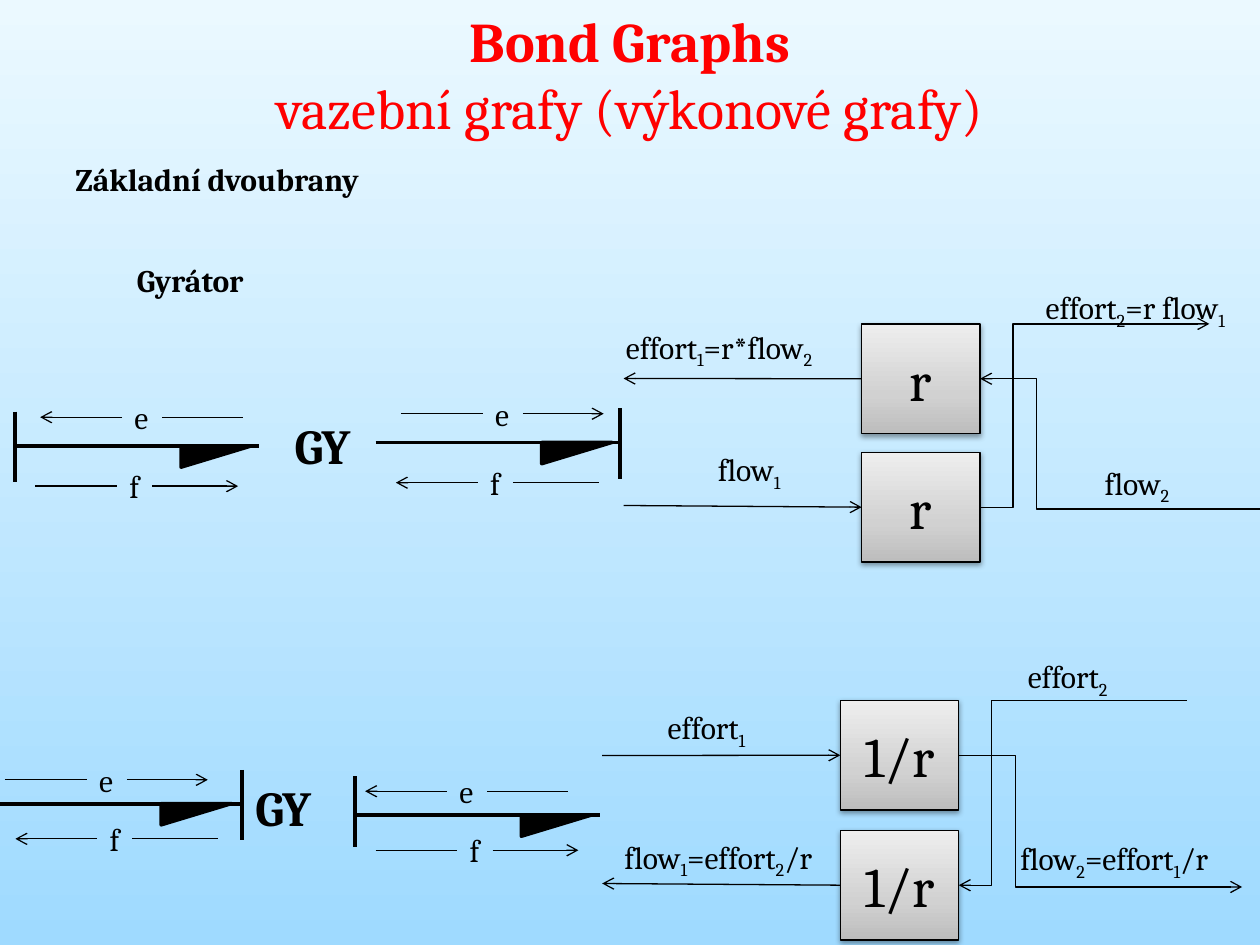
import copy
import itertools

import pptx
import pptx.dml.color
import pptx.enum.shapes
import pptx.enum.text
import pptx.oxml
import pptx.oxml.ns
import pptx.util

Cm, Pt = pptx.util.Cm, pptx.util.Pt
RGBColor = pptx.dml.color.RGBColor
SHAPES = pptx.enum.shapes.MSO_SHAPE
CONNECTORS = pptx.enum.shapes.MSO_CONNECTOR
CENTER = pptx.enum.text.PP_ALIGN.CENTER
qn = pptx.oxml.ns.qn

FONT = "Cambria"
BLACK = RGBColor(0x00, 0x00, 0x00)
RED = RGBColor(0xFF, 0x00, 0x00)
SKY_TOP = RGBColor(0xEB, 0xF9, 0xFF)
SKY_BOTTOM = RGBColor(0x9F, 0xDA, 0xFF)
BOX_DARK = RGBColor(0xBD, 0xBD, 0xBD)
BOX_MIDDLE = RGBColor(0xD1, 0xD1, 0xD1)
BOX_LIGHT = RGBColor(0xEE, 0xEE, 0xEE)

# Content; all lengths in centimetres
TITLE = [("Bond Graphs", True), ("vazební grafy (výkonové grafy)", False)]
HEADINGS = [  # text, left, top, width, height, size
    ("Základní dvoubrany", 1.27, 3.1, 7.16, 1.02, 18),
    ("Gyrátor", 2.51, 5.13, 3.1, 1.02, 18),
    ("GY", 5.69, 8.26, 2.06, 1.45, 28),
    ("GY", 4.9, 15.54, 2.06, 1.45, 28),
]
BONDS = [  # left, y, causal bar x and top, e offset x and y, f offset y, e points right
    (0.3, 8.99, 0.3, 8.3, 2.16, -1.09, 0.3, False),
    (7.57, 8.92, 12.5, 8.23, 2.16, -1.09, 0.3, True),
    (-0.1, 16.2, 4.88, 15.52, 1.85, -0.99, 0.2, True),
    (7.16, 16.43, 7.16, 15.65, 1.85, -0.99, 0.2, False),
]
DIAGRAMS = [
    {
        "gain": "r", "left": 17.37, "tops": (6.53, 9.12),
        "labels": [  # text, left, top, width
            ("effort1=r*flow2", 12.37, 6.48, 4.7),
            ("flow1", 14.22, 8.94, 1.91),
            ("effort2=r flow1", 20.83, 5.69, 4.65),
            ("flow2", 22.02, 9.22, 1.96),
        ],
        # per box: far x, far y, signal enters the box
        "left_signals": [(12.57, 7.63, False), (12.57, 10.19, True)],
        # per box: bend x, far x, far y, signal enters the box
        "right_signals": [(20.9, 25.5, 10.26, True), (20.42, 24.38, 6.53, False)],
    },
    {
        "gain": "1/r", "left": 16.94, "tops": (14.12, 16.74),
        "labels": [
            ("effort1", 13.21, 14.15, 2.26),
            ("flow1=effort2/r", 12.34, 16.76, 4.8),
            ("effort2", 20.47, 13.13, 2.31),
            ("flow2=effort1/r", 20.32, 16.79, 4.78),
        ],
        "left_signals": [(12.14, 15.23, True), (12.14, 17.81, False)],
        "right_signals": [(20.47, 25.04, 17.88, False), (19.99, 23.93, 14.12, True)],
    },
]

BOX_W, BOX_H = 2.39, 2.21
TEXT_H = 1.02
BOND_LENGTH = 4.93
BAR_H = 1.42

prs = pptx.Presentation()
prs.slide_width, prs.slide_height = Cm(25.4), Cm(19.05)
slide = prs.slides.add_slide(prs.slide_layouts[6])


def shade(fill, first, last, angle):
    fill.gradient()
    fill.gradient_angle = angle
    for stop, position, color in zip(fill.gradient_stops, (0, 1), (first, last)):
        stop.position = position
        stop.color.rgb = color


def style(paragraph, size, color=BLACK, bold=False):
    font = paragraph.font
    font.name, font.size, font.bold = FONT, Pt(size), bold
    font.color.rgb = color


def add_label(text, left, top, width, height=TEXT_H, size=18, bold=False):
    """One-line text whose digits are set as subscripts."""
    frame = slide.shapes.add_textbox(Cm(left), Cm(top), Cm(width), Cm(height)).text_frame
    frame.word_wrap = False
    frame.auto_size = pptx.enum.text.MSO_AUTO_SIZE.SHAPE_TO_FIT_TEXT
    paragraph = frame.paragraphs[0]
    style(paragraph, size, bold=bold)
    for is_digit, letters in itertools.groupby(text, str.isdigit):
        run = paragraph.add_run()
        run.text = "".join(letters)
        if is_digit:
            run.font._element.set("baseline", "-25000")


def add_line(start, end, width=0.75, arrow=False, bend=None):
    """Line between two points; bend is the x of an elbow's middle leg."""
    kind = CONNECTORS.STRAIGHT if bend is None else CONNECTORS.ELBOW
    line = slide.shapes.add_connector(kind, *(Cm(v) for v in (*start, *end)))
    line.line.color.rgb = BLACK
    line.line.width = Pt(width)
    properties = line._element.spPr
    if arrow:
        tail = pptx.oxml.parse_xml(f'<a:tailEnd {pptx.oxml.ns.nsdecls("a")} type="arrow"/>')
        line.line._get_or_add_ln().append(tail)
    if bend is not None:
        share = round((bend - start[0]) / (end[0] - start[0]) * 100000)
        guides = properties.find(qn("a:prstGeom")).get_or_add_avLst()
        guide = guides.makeelement(qn("a:gd"), {"name": "adj1", "fmla": f"val {share}"})
        guides.append(guide)
    properties.append(properties.makeelement(qn("a:effectLst"), {}))
    return line


def add_gain_box(text, left, top):
    box = slide.shapes.add_shape(SHAPES.RECTANGLE, Cm(left), Cm(top), Cm(BOX_W), Cm(BOX_H))
    shade(box.fill, BOX_DARK, BOX_LIGHT, 90)
    stops = box._element.spPr.find(qn("a:gradFill")).find(qn("a:gsLst"))
    stops.insert(1, copy.deepcopy(stops[0]))
    middle = box.fill.gradient_stops[1]
    middle.position, middle.color.rgb = 0.35, BOX_MIDDLE
    box.line.color.rgb, box.line.width = BLACK, Pt(0.75)
    box.shadow.inherit = False
    box._element.spPr.find(qn("a:effectLst")).append(pptx.oxml.parse_xml(
        f'<a:outerShdw {pptx.oxml.ns.nsdecls("a")} blurRad="40000" dist="20000" '
        'dir="5400000" rotWithShape="0"><a:srgbClr val="000000">'
        '<a:alpha val="38000"/></a:srgbClr></a:outerShdw>'))
    paragraph = box.text_frame.paragraphs[0]
    paragraph.text, paragraph.alignment = text, CENTER
    style(paragraph, 32)
    return box


def add_variable(name, left, top, width, after, points_right):
    """Variable name with a line on each side, one of them with an arrowhead."""
    add_label(name, left, top, width)
    y = top + TEXT_H / 2
    near, far = (left - 1.65, y), (left, y)
    add_line(*((near, far) if points_right else (far, near)), arrow=not points_right)
    add_line((left + width, y), (left + width + after, y), arrow=points_right)


# Background and title
shade(slide.background.fill, SKY_TOP, SKY_BOTTOM, 270)
title = slide.shapes.add_textbox(0, 0, prs.slide_width, Cm(3)).text_frame
title.word_wrap = True
for i, (text, bold) in enumerate(TITLE):
    paragraph = title.add_paragraph() if i else title.paragraphs[0]
    paragraph.text, paragraph.alignment = text, CENTER
    style(paragraph, 32, RED, bold)

for heading in HEADINGS:
    add_label(*heading, bold=True)

# Bonds with half arrow, causal bar, effort and flow
for left, y, bar_x, bar_top, e_dx, e_dy, f_dy, e_right in BONDS:
    add_line((left, y), (left + BOND_LENGTH, y), 2.25)
    half_arrow = slide.shapes.add_shape(
        SHAPES.RIGHT_TRIANGLE, Cm(left + 3.35), Cm(y), Cm(1.42), Cm(0.43))
    half_arrow._element.spPr.find(qn("a:xfrm")).set("flipV", "1")
    half_arrow.fill.solid()
    half_arrow.fill.fore_color.rgb = half_arrow.line.color.rgb = BLACK
    half_arrow.line.width = Pt(2)
    half_arrow.shadow.inherit = False
    add_line((bar_x, bar_top), (bar_x, bar_top + BAR_H), 2.25)
    add_variable("e", left + e_dx, y + e_dy, 0.81, 1.63, e_right)
    add_variable("f", left + 2.06, y + f_dy, 0.71, 1.73, not e_right)

# Block diagrams
for diagram in DIAGRAMS:
    left = diagram["left"]
    for top, (x, y, enters), (bend, far_x, far_y, returns) in zip(
            diagram["tops"], diagram["left_signals"], diagram["right_signals"]):
        box = add_gain_box(diagram["gain"], left, top)
        middle = top + BOX_H / 2
        outer, port = (x, y), (left, middle)
        if enters:
            add_line(outer, port, arrow=True).end_connect(box, 1)
        else:
            add_line(port, outer, arrow=True).begin_connect(box, 1)
        ends = [(left + BOX_W, middle), (far_x, far_y)]
        add_line(*(reversed(ends) if returns else ends), arrow=True, bend=bend)
    for label in diagram["labels"]:
        add_label(*label)

prs.save("out.pptx")
